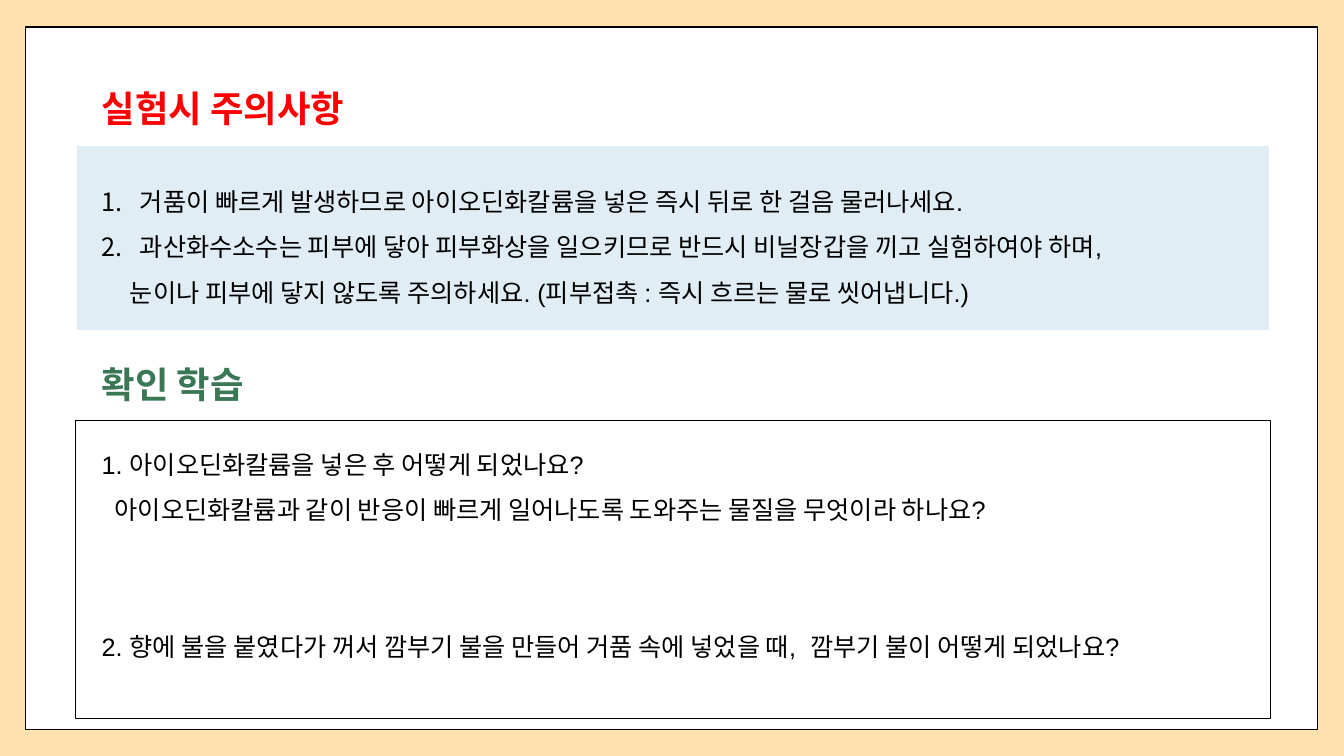
from lxml import etree
from pptx import Presentation
from pptx.dml.color import RGBColor
from pptx.enum.shapes import MSO_SHAPE
from pptx.enum.text import MSO_ANCHOR, PP_ALIGN
from pptx.oxml.ns import qn
from pptx.util import Inches, Pt

RECT = MSO_SHAPE.RECTANGLE
TOP = MSO_ANCHOR.TOP
LEFT = PP_ALIGN.LEFT

CREAM = RGBColor(0xFF, 0xE1, 0xAF)
WHITE = RGBColor(0xFF, 0xFF, 0xFF)
BLACK = RGBColor(0, 0, 0)
PALE_BLUE = RGBColor(0xD8, 0xE8, 0xF1)
RED = RGBColor(0xFF, 0, 0)
GREEN = RGBColor(0x39, 0x77, 0x55)

TEXT_LEFT = 0.91
PANEL_LEFT, PANEL_WIDTH = 0.75, 11.85


def add_panel(s, x, y, w, h, fill, line, line_width, opacity=100):
    sp = s.shapes.add_shape(RECT, Inches(x), Inches(y), Inches(w), Inches(h))
    sp.shadow.inherit = False
    sp.fill.solid()
    sp.fill.fore_color.rgb = fill
    sp.line.color.rgb = line
    sp.line.width = Pt(line_width)
    if opacity < 100:
        color = sp.fill._xPr.find(qn("a:solidFill"))[0]
        etree.SubElement(color, qn("a:alpha")).set("val", str(opacity * 1000))


def add_text_frame(s, y, w, h):
    sp = s.shapes.add_textbox(Inches(TEXT_LEFT), Inches(y), Inches(w), Inches(h))
    tf = sp.text_frame
    tf.word_wrap = True
    tf.vertical_anchor = TOP
    return tf


def format_runs(p, font, size, color, bold=False):
    p.alignment = LEFT
    for r in p.runs:
        r.font.name = font
        r.font.size = Pt(size)
        r.font.color.rgb = color
        r.font.bold = bold


def add_heading(s, text, y, color):
    tf = add_text_frame(s, y, 5.82, 0.48)
    tf.margin_left = tf.margin_right = Inches(0.1)
    tf.margin_top = tf.margin_bottom = Inches(0.1)
    tf.text = text
    format_runs(tf.paragraphs[0], "Calibri", 26, color, bold=True)


def set_indent(p, left, numbered):
    pPr = p._p.get_or_add_pPr()
    pPr.set("marL", str(Inches(left)))
    pPr.set("indent", str(-Inches(left) if numbered else 0))
    if numbered:
        etree.SubElement(pPr, qn("a:buFont")).set("typeface", "+mj-lt")
        etree.SubElement(pPr, qn("a:buAutoNum")).set("type", "arabicPeriod")


def add_body(s, y, w, h, lines):
    """Each line: text, line spacing, left indent, numbered, points before."""
    tf = add_text_frame(s, y, w, h)
    for i, (text, spacing, indent, numbered, before) in enumerate(lines):
        p = tf.add_paragraph() if i else tf.paragraphs[0]
        p.text = text
        p.line_spacing = spacing
        p.space_before = Pt(before)
        format_runs(p, "Arial", 18, BLACK)
        set_indent(p, indent, numbered)


def main():
    prs = Presentation()
    prs.slide_width, prs.slide_height = Inches(13.33), Inches(7.5)
    s = prs.slides.add_slide(prs.slide_layouts[6])
    s.background.fill.solid()
    s.background.fill.fore_color.rgb = CREAM

    # Page frame
    add_panel(s, 0.25, 0.27, 12.82, 6.97, WHITE, BLACK, 1)

    # Safety precautions
    add_heading(s, "실험시 주의사항", 0.75, RED)
    add_panel(s, PANEL_LEFT, 1.44, PANEL_WIDTH, 1.84, PALE_BLUE, WHITE, 1.5, opacity=75)
    add_body(s, 1.5, 11.29, 1.62, [
        ("거품이 빠르게 발생하므로 아이오딘화칼륨을 넣은 즉시 뒤로 한 걸음 물러나세요.",
         2, 0.38, True, 0),
        ("과산화수소수는 피부에 닿아 피부화상을 일으키므로 반드시 비닐장갑을 끼고 실험하여야 하며,",
         1.5, 0.38, True, 0),
        ("눈이나 피부에 닿지 않도록 주의하세요. (피부접촉 : 즉시 흐르는 물로 씻어냅니다.)",
         1.5, 0.28, False, 0),
    ])

    # Review questions, with room for an answer
    add_heading(s, "확인 학습", 3.49, GREEN)
    add_panel(s, PANEL_LEFT, 4.17, PANEL_WIDTH, 2.96, WHITE, BLACK, 1)
    add_body(s, 4.26, 11.43, 2.37, [
        ("1. 아이오딘화칼륨을 넣은 후 어떻게 되었나요?", 1.5, 0, False, 0),
        ("아이오딘화칼륨과 같이 반응이 빠르게 일어나도록 도와주는 물질을 무엇이라 하나요?",
         1.5, 0.13, False, 0),
        ("2. 향에 불을 붙였다가 꺼서 깜부기 불을 만들어 거품 속에 넣었을 때,  깜부기 불이 어떻게 되었나요?",
         1.5, 0, False, 65),
    ])

    prs.save("out.pptx")


if __name__ == "__main__":
    main()
